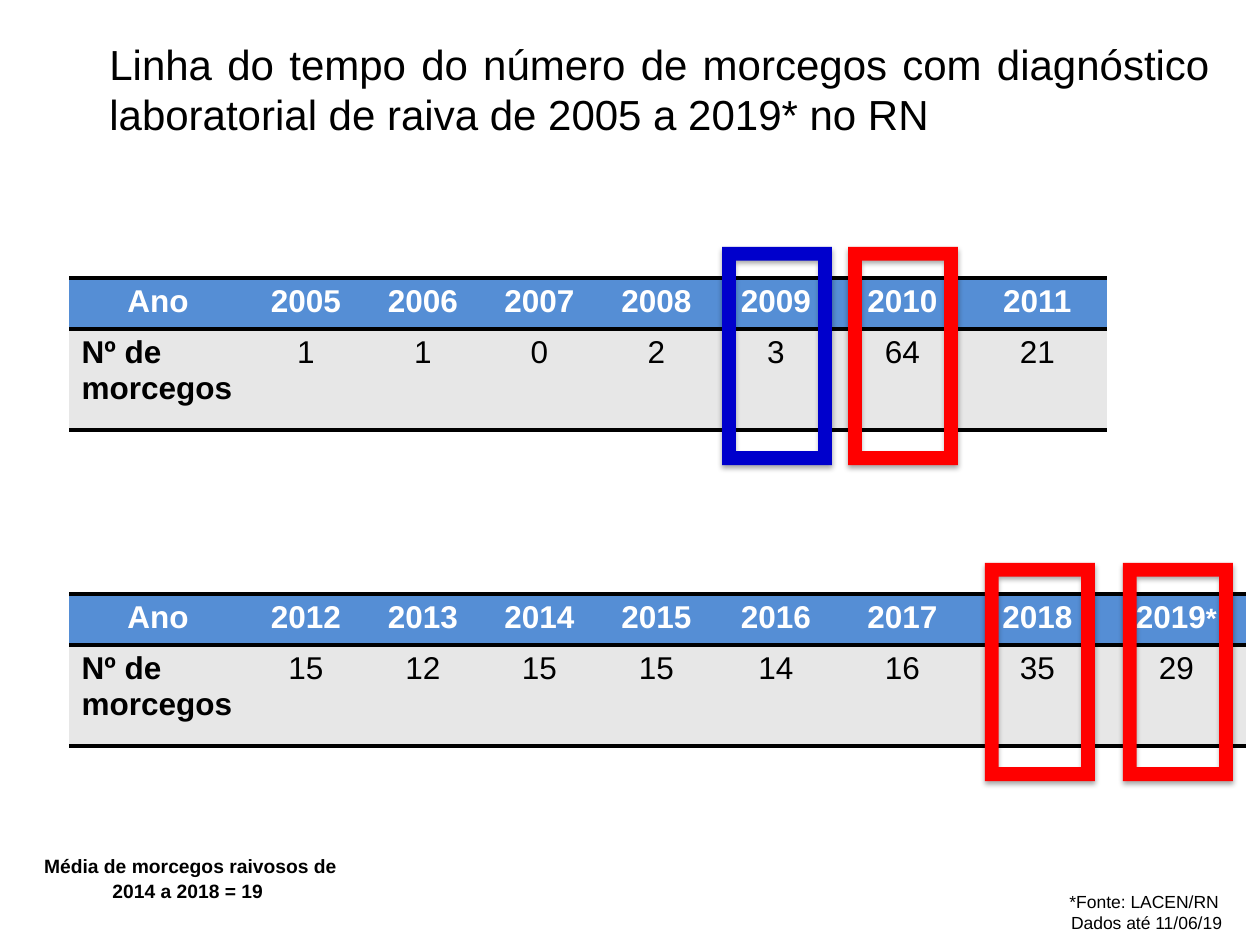
from lxml import etree
from pptx import Presentation, util as u
from pptx.dml import color
from pptx.enum import shapes, text
from pptx.oxml import ns

PX = 914400 / 126
BLACK, WHITE, RED, BLUE = "000000", "FFFFFF", "FF0000", "0000CC"
HEADER, BODY = "558ED5", "E7E7E7"
COLUMNS = [178, 118, 116, 117, 117, 122, 131, 139, 139]
ROWS = [51, 101]
ALIGN = text.PP_ALIGN


def px(length):
    """Turn pixels into EMU."""
    return u.Emu(round(length * PX))


def rgb(code):
    """Turn a hex string into a colour."""
    return color.RGBColor.from_string(code)


def add_xml(parent, tag, **attributes):
    """Append a DrawingML element to its parent."""
    return etree.SubElement(parent, ns.qn(tag), attributes)


def write(frame, lines, size=18, ink=BLACK, bold=False, align=ALIGN.CENTER, spacing=None, after=None):
    """Write lines, each a list of (words, size) runs or a plain string."""
    for index, line in enumerate(lines):
        paragraph = frame.paragraphs[0] if index == 0 else frame.add_paragraph()
        paragraph.alignment = align
        paragraph.line_spacing = spacing
        paragraph.space_after = after
        for words, points in [(line, size)] if isinstance(line, str) else line:
            run = paragraph.add_run()
            run.text = words
            run.font.name = "Arial"
            run.font.size = u.Pt(points)
            run.font.bold = bold
            run.font.color.rgb = rgb(ink)


def add_text(slide, box, lines, **style):
    """Place a wrapping text box that fits its text."""
    textbox = slide.shapes.add_textbox(*map(px, box))
    textbox.text_frame.word_wrap = True
    textbox.text_frame.auto_size = text.MSO_AUTO_SIZE.SHAPE_TO_FIT_TEXT
    write(textbox.text_frame, lines, **style)


def rule_cell(cell):
    """Draw black rules above and below a cell and none at its sides."""
    properties = cell._tc.get_or_add_tcPr()
    for side in ("a:lnL", "a:lnR"):
        add_xml(add_xml(properties, side, w="0"), "a:noFill")
    for side in ("a:lnT", "a:lnB"):
        line = add_xml(properties, side, w=str(u.Pt(2)))
        add_xml(add_xml(line, "a:solidFill"), "a:srgbClr", val=BLACK)


def add_marker(slide, box, fill):
    """Place a shadowed frame around a highlighted year."""
    marker = slide.shapes.add_shape(shapes.MSO_SHAPE.FRAME, *map(px, box))
    marker.fill.solid()
    marker.fill.fore_color.rgb = rgb(fill)
    marker.line.fill.background()
    effects = add_xml(marker._element.spPr, "a:effectLst")
    shadow = add_xml(effects, "a:outerShdw", blurRad=str(u.Pt(3.1)), dist=str(u.Pt(1.8)),
                     dir="5400000", rotWithShape="0")
    add_xml(add_xml(shadow, "a:srgbClr", val=BLACK), "a:alpha", val="35000")


def add_timeline(slide, left, top, years, counts, markers):
    """Place a table of yearly counts and the markers, given as (offset, colour)."""
    widths = COLUMNS[:len(years) + 1]
    table = slide.shapes.add_table(2, len(widths), px(left), px(top), px(sum(widths)), px(sum(ROWS))).table
    table.horz_banding = False
    for column, width in zip(table.columns, widths):
        column.width = px(width)
    contents = [["Ano", *years], ["Nº de morcegos", *counts]]
    for row, (height, entries) in enumerate(zip(ROWS, contents)):
        table.rows[row].height = px(height)
        for col, entry in enumerate(entries):
            cell = table.cell(row, col)
            rule_cell(cell)
            cell.fill.solid()
            cell.fill.fore_color.rgb = rgb(BODY if row else HEADER)
            write(cell.text_frame, [entry], ink=BLACK if row else WHITE,
                  bold=row == 0 or col == 0,
                  align=ALIGN.LEFT if row and col == 0 else ALIGN.CENTER)
    for offset, fill in markers:
        add_marker(slide, (left + offset, top - 31, 110, 218), fill)


def main():
    """Build the slide and save it."""
    deck = Presentation()
    deck.slide_width, deck.slide_height = px(1260), px(945)
    slide = deck.slides.add_slide(deck.slide_layouts[6])
    add_text(slide, (97, 32, 1125, 115),
             ["Linha do tempo do número de morcegos com diagnóstico laboratorial de raiva de 2005 a 2019* no RN"],
             size=24, align=ALIGN.JUSTIFY)
    add_timeline(slide, 69, 278, [str(year) for year in range(2005, 2012)],
                 ["1", "1", "0", "2", "3", "64", "21"], [(653, BLUE), (779, RED)])
    add_timeline(slide, 69, 594, [*map(str, range(2012, 2019)), [("2019", 18), ("*", 16)]],
                 ["15", "12", "15", "15", "14", "16", "35", "29"], [(916, RED), (1054, RED)])
    add_text(slide, (23, 847, 335, 63), ["Média de morcegos raivosos de 2014 a 2018 = 19 "],
             size=11, bold=True, spacing=1.07, after=u.Pt(8))
    add_text(slide, (1045, 885, 203, 55), ["*Fonte: LACEN/RN ", "Dados até 11/06/19"], size=10)
    deck.save("out.pptx")


if __name__ == "__main__":
    main()
